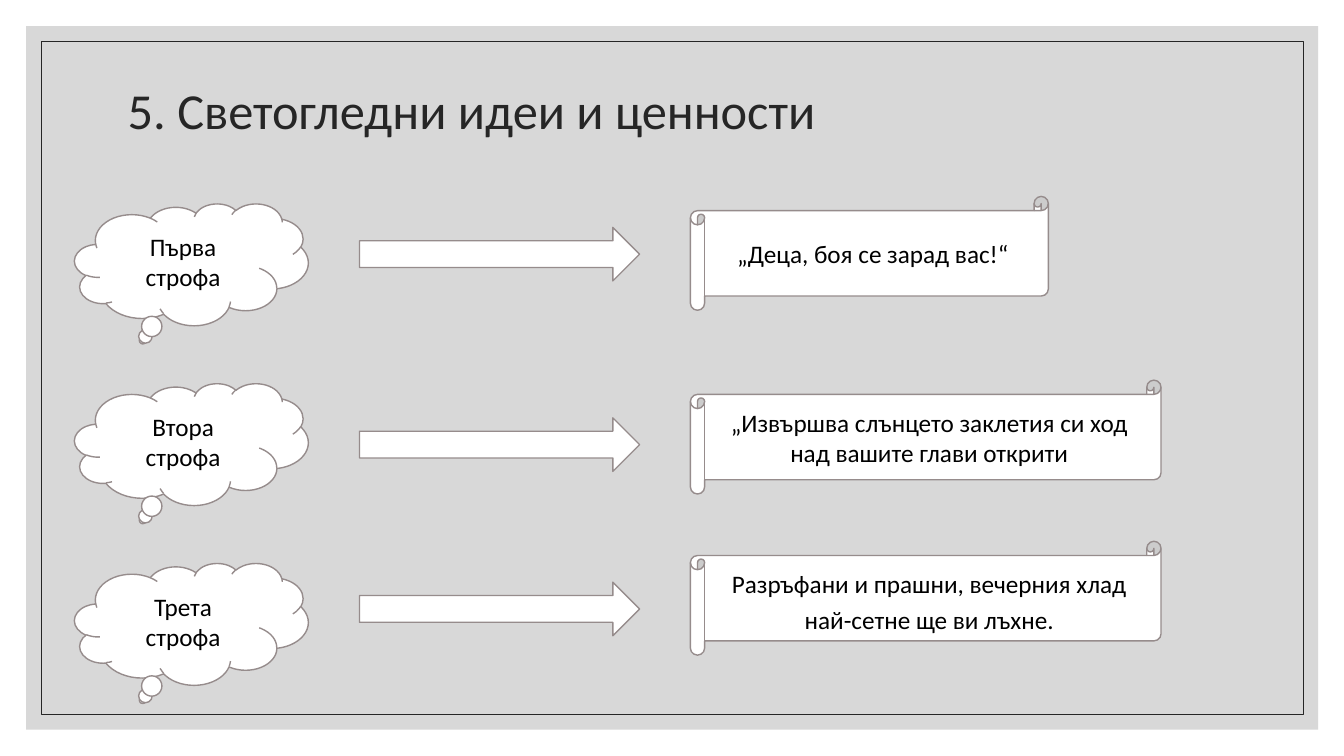
"""Builds the slide that links each stanza to the line stating its idea."""
from dataclasses import dataclass

from lxml.etree import SubElement
from pptx import Presentation
from pptx.dml.color import RGBColor
from pptx.enum.shapes import MSO_SHAPE
from pptx.enum.text import MSO_ANCHOR, PP_ALIGN
from pptx.oxml.ns import qn
from pptx.shapes.autoshape import Shape
from pptx.slide import Slide
from pptx.util import Cm, Pt

FONT = "Calibri"
INK = "262626"
OUTLINE = "968C8C"
WHITE = "FFFFFF"
BLACK = "000000"
CLOUD_TOP = 5.13
CLOUD_STEP = 4.53


@dataclass
class Box:
    left: float
    top: float
    width: float
    height: float


@dataclass
class Stanza:
    name: str
    quote: str
    arrow_top: float
    scroll_top: float
    scroll_width: float
    line_spacing: float = 1.0


STANZAS = [
    Stanza("Първа строфа", "„Деца, боя се зарад вас!“", 5.73, 4.95, 9.02),
    Stanza("Втора строфа",
           "„Извършва слънцето заклетия си ход\nнад вашите глави открити",
           10.53, 9.58, 11.86),
    Stanza("Трета строфа",
           "Разръфани и прашни, вечерния хлад\nнай-сетне ще ви лъхне.",
           14.67, 13.64, 11.86, 1.2),
]


def color(value: str) -> RGBColor:
    """Turn a hex string into a colour."""
    return RGBColor.from_string(value)


def add_figure(slide: Slide, kind: MSO_SHAPE, box: Box, fill: str | None = WHITE,
               line: str | None = OUTLINE, line_width: float = 1) -> Shape:
    """Draw a flat preset shape with an optional fill and outline."""
    figure = slide.shapes.add_shape(
        kind, Cm(box.left), Cm(box.top), Cm(box.width), Cm(box.height))
    figure.shadow.inherit = False
    if fill:
        figure.fill.solid()
        figure.fill.fore_color.rgb = color(fill)
    else:
        figure.fill.background()
    if line:
        figure.line.color.rgb = color(line)
        figure.line.width = Pt(line_width)
    else:
        figure.line.fill.background()
    return figure


def write(shape: Shape, wording: str, size: float = 18, ink: str = BLACK,
          align: PP_ALIGN = PP_ALIGN.CENTER, spacing: float = 1.0) -> None:
    """Put formatted, vertically centred text into a shape."""
    frame = shape.text_frame
    frame.text = wording
    frame.word_wrap = True
    frame.vertical_anchor = MSO_ANCHOR.MIDDLE
    for paragraph in frame.paragraphs:
        paragraph.alignment = align
        paragraph.line_spacing = spacing
        for run in paragraph.runs:
            run.font.name = FONT
            run.font.size = Pt(size)
            run.font.color.rgb = color(ink)


def add_backdrop(slide: Slide) -> None:
    """Draw the translucent grey panel and the thin frame inside it."""
    panel = add_figure(slide, MSO_SHAPE.RECTANGLE, Box(0.66, 0.66, 32.56, 17.73),
                       fill="BFBFBF", line=None)
    tint = panel.fill._xPr.find(qn("a:solidFill"))[0]
    SubElement(tint, qn("a:alpha")).set("val", "60000")
    add_figure(slide, MSO_SHAPE.RECTANGLE, Box(1.04, 1.04, 31.8, 16.97),
               fill=None, line=INK, line_width=0.5)


def add_stanza(slide: Slide, stanza: Stanza, cloud_top: float) -> None:
    """Draw one row: cloud, arrow and scroll."""
    cloud = add_figure(slide, MSO_SHAPE.CLOUD_CALLOUT,
                       Box(1.88, cloud_top, 5.89, 3.07))
    write(cloud, stanza.name)
    add_figure(slide, MSO_SHAPE.RIGHT_ARROW, Box(9.06, stanza.arrow_top, 7.06, 1.35))
    scroll = add_figure(slide, MSO_SHAPE.HORIZONTAL_SCROLL,
                        Box(17.4, stanza.scroll_top, stanza.scroll_width, 2.87))
    write(scroll, stanza.quote, spacing=stanza.line_spacing)


def main() -> None:
    """Build and save the presentation."""
    presentation = Presentation()
    presentation.slide_width = Cm(33.87)
    presentation.slide_height = Cm(19.05)
    slide = presentation.slides.add_slide(presentation.slide_layouts[6])
    add_backdrop(slide)
    title = slide.shapes.add_textbox(Cm(2.97), Cm(1.78), Cm(27.94), Cm(2.16))
    write(title, "5. Светогледни идеи и ценности", 36, INK, PP_ALIGN.LEFT, 0.9)
    for row, stanza in enumerate(STANZAS):
        add_stanza(slide, stanza, CLOUD_TOP + row * CLOUD_STEP)
    presentation.save("out.pptx")


if __name__ == "__main__":
    main()
